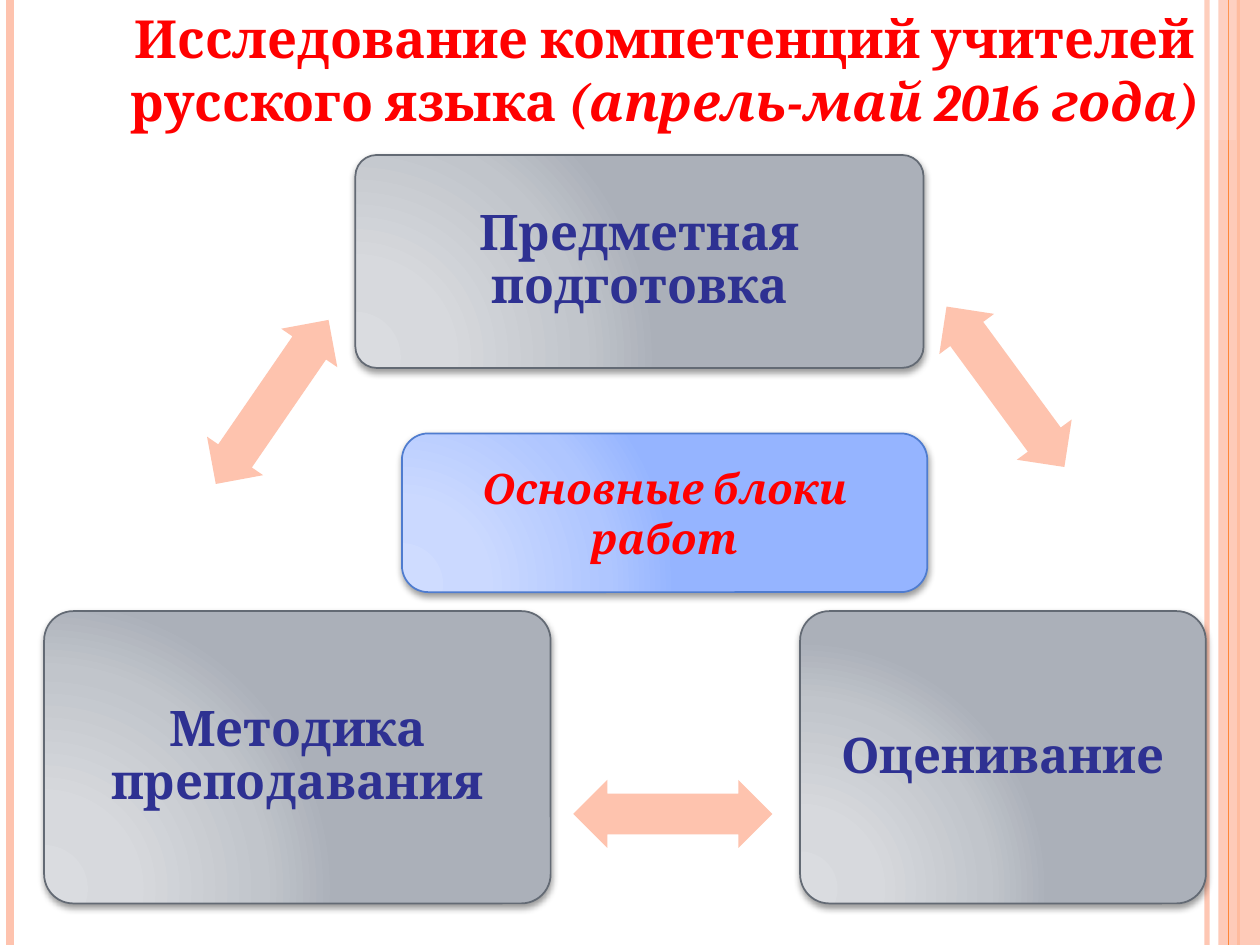
from lxml import etree
from pptx import Presentation
from pptx.dml.color import RGBColor
from pptx.enum import shapes, text
from pptx.oxml import parse_xml
from pptx.oxml.ns import nsdecls, qn
from pptx.util import Inches, Pt

FONT = "Cambria"
COLORS = {
    "white": "FFFFFF", "peach": "FEC3AE", "orange": "FE8637",
    "red": "FF0000", "navy": "2E3192", "black": "000000",
    "gray_line": "636A74", "blue_line": "4F7CCF",
}
GRAY_STOPS = {0: "DADCE0", 30: "D7D9DD", 75: "C1C5CB", 100: "ABB0B9"}
BLUE_STOPS = {0: "CFDCFF", 30: "CBD9FF", 75: "AFC6FF", 100: "95B4FF"}


def rgb(name):
    return RGBColor.from_string(COLORS[name])


def set_alpha(format_element, percent):
    color = format_element.find(".//" + qn("a:srgbClr"))
    etree.SubElement(color, qn("a:alpha"), val=str(percent * 1000))


def add_preset(slide, preset, box, fill=None):
    shape = slide.shapes.add_shape(preset, *map(Inches, box))
    shape.shadow.inherit = False
    shape.line.fill.background()
    if fill:
        shape.fill.solid()
        shape.fill.fore_color.rgb = rgb(fill)
    return shape


def style_run(run, size, color, italic=False):
    run.font.name = FONT
    run.font.size = Pt(size)
    run.font.bold = True
    run.font.italic = italic
    run.font.color.rgb = rgb(color)


def add_stripe(slide, x, height, color, width, alpha=None):
    stripe = slide.shapes.add_connector(
        shapes.MSO_CONNECTOR.STRAIGHT, Inches(x), 0, Inches(x), Inches(height))
    stripe.line.color.rgb = rgb(color)
    stripe.line.width = Pt(width)
    properties = stripe._element.spPr
    if alpha:
        set_alpha(properties, alpha)
    etree.SubElement(properties, qn("a:effectLst"))


def add_side_stripes(slide, width, height):
    add_stripe(slide, width - 0.42, height, "peach", 3, 93)
    add_stripe(slide, 0.08, height, "peach", 4.5)
    add_stripe(slide, width - 0.17, height, "orange", 1.5)
    band = add_preset(slide, shapes.MSO_SHAPE.RECTANGLE,
                      (width - 0.33, 0, 0.33, height), "peach")
    set_alpha(band._element.spPr, 87)
    add_stripe(slide, width - 0.25, height, "orange", 0.75)


def add_title(slide, box):
    title = add_preset(slide, shapes.MSO_SHAPE.RECTANGLE, box, "white")
    set_alpha(title._element.spPr, 13)
    frame = title.text_frame
    frame.word_wrap = True
    frame.vertical_anchor = text.MSO_ANCHOR.TOP
    paragraph = frame.paragraphs[0]
    paragraph.alignment = text.PP_ALIGN.CENTER
    parts = (("Исследование компетенций учителей русского языка ", False),
             ("(апрель-май 2016 года)", True))
    for wording, italic in parts:
        run = paragraph.add_run()
        run.text = wording
        style_run(run, 30, "red", italic)


def add_glossy_fill(shape, stops):
    gradient_stops = "".join(
        f'<a:gs pos="{position * 1000}"><a:srgbClr val="{color}"/></a:gs>'
        for position, color in stops.items())
    gradient = parse_xml(
        f'<a:gradFill {nsdecls("a")} rotWithShape="1"><a:gsLst>{gradient_stops}</a:gsLst>'
        '<a:path path="circle"><a:fillToRect l="5000" t="100000" r="120000" b="10000"/>'
        '</a:path></a:gradFill>')
    shape._element.spPr.find(qn("a:prstGeom")).addnext(gradient)


def add_drop_shadow(shape):
    effects = shape._element.spPr.find(qn("a:effectLst"))
    effects.append(parse_xml(
        f'<a:outerShdw {nsdecls("a")} blurRad="{Pt(4)}" dist="{Pt(2)}" dir="5400000" '
        f'rotWithShape="0"><a:srgbClr val="{COLORS["black"]}"><a:alpha val="40000"/>'
        '</a:srgbClr></a:outerShdw>'))


def add_card(slide, box, wording, stops, outline, size, color, italic=False):
    card = add_preset(slide, shapes.MSO_SHAPE.ROUNDED_RECTANGLE, box)
    add_glossy_fill(card, stops)
    add_drop_shadow(card)
    card.line.color.rgb = rgb(outline)
    card.line.width = Pt(1)
    frame = card.text_frame
    frame.word_wrap = True
    frame.vertical_anchor = text.MSO_ANCHOR.MIDDLE
    frame.text = wording
    paragraph = frame.paragraphs[0]
    paragraph.alignment = text.PP_ALIGN.CENTER
    style_run(paragraph.runs[0], size, color, italic)
    return card


def add_block(slide, box, wording):
    block = add_card(slide, box, wording, GRAY_STOPS, "gray_line", 28, "navy")
    block.adjustments[0] = 0.1
    block.text_frame.paragraphs[0].line_spacing = 0.9


def add_link(slide, left, top, rotation):
    link = add_preset(slide, shapes.MSO_SHAPE.LEFT_RIGHT_ARROW,
                      (left, top, 1.58, 0.54), "peach")
    link.adjustments[0] = 0.6
    link.adjustments[1] = 0.5
    link.rotation = rotation


def add_cycle(slide, left, top):
    blocks = (((2.47, 0, 4.51, 1.69), "Предметная подготовка"),
              ((6, 3.62, 3.22, 2.32), "Оценивание"),
              ((0, 3.62, 4.02, 2.32), "Методика преподавания"))
    links = ((6.84, 1.57, 53.7), (4.2, 4.96, 180), (1.02, 1.69, 304.5))
    for (x, y, width, height), wording in blocks:
        add_block(slide, (left + x, top + y, width, height), wording)
    for x, y, rotation in links:
        add_link(slide, left + x, top + y, rotation)
    add_card(slide, (left + 2.84, top + 2.21, 4.17, 1.26), "Основные блоки работ",
             BLUE_STOPS, "blue_line", 24, "red", italic=True)


def main():
    width, height = 10, 7.5
    presentation = Presentation()
    presentation.slide_width = Inches(width)
    presentation.slide_height = Inches(height)
    slide = presentation.slides.add_slide(presentation.slide_layouts[6])
    add_side_stripes(slide, width, height)
    add_title(slide, (0.75, 0, 9.06, 1.11))
    add_cycle(slide, 0.35, 1.23)
    presentation.save("out.pptx")


if __name__ == "__main__":
    main()
